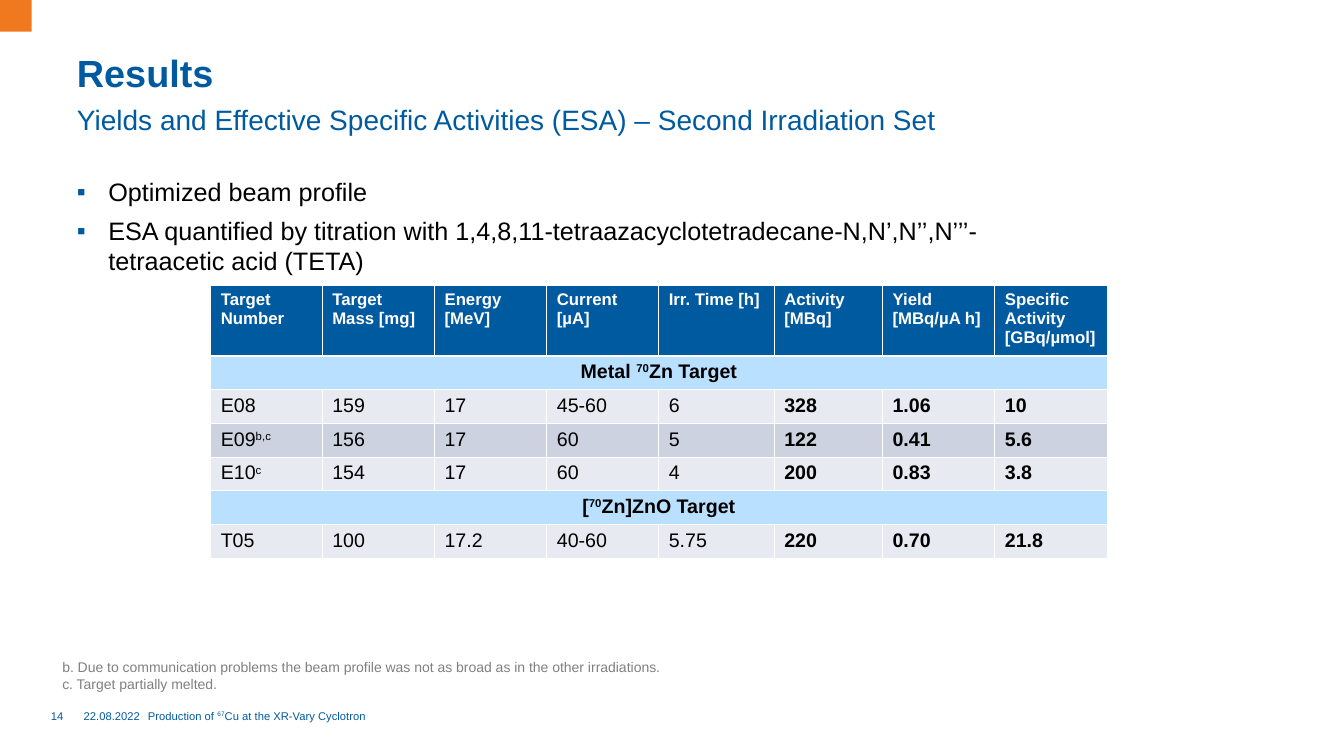
from dataclasses import dataclass

from lxml import etree
from pptx import Presentation
from pptx.enum import shapes, text
from pptx.dml.color import RGBColor
from pptx.oxml import ns
from pptx.util import Cm, Pt

COLORS = {
    "orange": "F0781E",
    "blue": "005AA0",
    "sky": "B9E0FF",
    "light": "E7EAF0",
    "dark": "CCD2DF",
    "white": "FFFFFF",
    "black": "000000",
    "gray": "808080",
}
LEFT, RIGHT, CENTER = text.PP_ALIGN.LEFT, text.PP_ALIGN.RIGHT, text.PP_ALIGN.CENTER
TOP, MIDDLE = text.MSO_ANCHOR.TOP, text.MSO_ANCHOR.MIDDLE


@dataclass
class Style:
    size: float
    color: str
    bold: bool = False
    align: text.PP_ALIGN = LEFT
    space_after: float = 0
    line_spacing: float = 1.0
    bullet: str = ""


@dataclass
class Label:
    left: float
    top: float
    width: float
    height: float
    lines: list[str]
    style: Style
    anchor: text.MSO_ANCHOR = TOP
    inset: tuple[float, float] = (0, 0)


@dataclass
class Row:
    cells: list[str]
    fill: str
    height: float = 0.85


def color(name: str) -> RGBColor:
    return RGBColor.from_string(COLORS[name])


def add_bullet(paragraph, mark: str) -> None:
    properties = paragraph._p.get_or_add_pPr()
    properties.set("marL", str(Cm(0.79)))
    properties.set("indent", str(Cm(-0.79)))
    bullet_color = etree.SubElement(properties, ns.qn("a:buClr"))
    etree.SubElement(bullet_color, ns.qn("a:srgbClr"), val=COLORS["blue"])
    etree.SubElement(properties, ns.qn("a:buFont"), typeface="Arial")
    etree.SubElement(properties, ns.qn("a:buChar"), char=mark)


def write_line(paragraph, line: str, style: Style) -> None:
    """Write one paragraph; parts between carets are superscript."""
    paragraph.alignment = style.align
    paragraph.line_spacing = style.line_spacing
    paragraph.space_after = Pt(style.space_after)
    if style.bullet:
        add_bullet(paragraph, style.bullet)
    paragraph.font.name = "Arial"
    paragraph.font.size = Pt(style.size)
    paragraph.font.bold = style.bold
    paragraph.font.color.rgb = color(style.color)
    for index, part in enumerate(line.split("^")):
        if part:
            span = paragraph.add_run()
            span.text = part
            if index % 2:
                span._r.get_or_add_rPr().set("baseline", "30000")


def add_label(page, label: Label) -> None:
    box = page.shapes.add_textbox(
        Cm(label.left), Cm(label.top), Cm(label.width), Cm(label.height))
    frame = box.text_frame
    frame.word_wrap = True
    frame.vertical_anchor = label.anchor
    frame.margin_left = frame.margin_right = Cm(label.inset[0])
    frame.margin_top = frame.margin_bottom = Cm(label.inset[1])
    for index, line in enumerate(label.lines):
        paragraph = frame.add_paragraph() if index else frame.paragraphs[0]
        write_line(paragraph, line, label.style)


def add_results(page, rows: list[Row], widths: list[float]) -> None:
    table = page.shapes.add_table(
        len(rows), len(widths), Cm(5.31), Cm(7.19),
        Cm(sum(widths)), Cm(sum(row.height for row in rows))).table
    table.horz_banding = False
    for column, width in zip(table.columns, widths):
        column.width = Cm(width)
    for row_index, row in enumerate(rows):
        table.rows[row_index].height = Cm(row.height)
        is_group = len(row.cells) == 1
        if is_group:
            table.cell(row_index, 0).merge(table.cell(row_index, len(widths) - 1))
        for column_index, value in enumerate(row.cells):
            cell = table.cell(row_index, column_index)
            cell.fill.solid()
            cell.fill.fore_color.rgb = color(row.fill)
            if row_index == 0:
                style = Style(12, "white", bold=True)
            elif is_group:
                style = Style(14, "black", bold=True, align=CENTER)
            else:
                style = Style(14, "black", bold=column_index >= FIRST_RESULT)
            write_line(cell.text_frame.paragraphs[0], value, style)


# Content
FOOTER = Style(8, "blue")
FOOTER_RIGHT = Style(8, "blue", align=RIGHT)
LABELS = [
    Label(1.94, 1.37, 19.5, 1.14, ["Results"],
          Style(27, "blue", bold=True, line_spacing=0.9)),
    Label(1.94, 2.59, 23.52, 0.91,
          ["Yields and Effective Specific Activities (ESA) – Second Irradiation Set"],
          Style(20, "blue", space_after=6)),
    Label(1.94, 4.45, 24.46, 3.15,
          ["Optimized beam profile",
           "ESA quantified by titration with "
           "1,4,8,11-tetraazacyclotetradecane-N,N’,N’’,N’’’-tetraacetic acid (TETA)"],
          Style(18, "black", space_after=6, bullet="▪")),
    Label(1.32, 16.46, 31.72, 1.12,
          ["b. Due to communication problems the beam profile was not as broad "
           "as in the other irradiations.",
           "c. Target partially melted."],
          Style(10, "gray"), inset=(0.25, 0.13)),
    Label(0.13, 17.53, 1.47, 1.02, ["14"], FOOTER_RIGHT, MIDDLE),
    Label(1.83, 17.53, 1.7, 1.02, ["22.08.2022"], FOOTER_RIGHT, MIDDLE),
    Label(3.73, 17.53, 12.57, 1.02,
          ["Production of ^67^Cu at the XR-Vary Cyclotron"], FOOTER, MIDDLE),
]
FIRST_RESULT = 5
WIDTHS = [2.81, 2.83, 2.83, 2.82, 2.91, 2.73, 2.83, 2.83]
ROWS = [
    Row(["Target Number", "Target Mass [mg]", "Energy [MeV]", "Current [µA]",
         "Irr. Time [h]", "Activity [MBq]", "Yield [MBq/µA h]",
         "Specific Activity [GBq/µmol]"], "blue", 1.68),
    Row(["Metal ^70^Zn Target"], "sky"),
    Row(["E08", "159", "17", "45-60", "6", "328", "1.06", "10"], "light"),
    Row(["E09^b,c^", "156", "17", "60", "5", "122", "0.41", "5.6"], "dark"),
    Row(["E10^c^", "154", "17", "60", "4", "200", "0.83", "3.8"], "light"),
    Row(["[^70^Zn]ZnO Target"], "sky"),
    Row(["T05", "100", "17.2", "40-60", "5.75", "220", "0.70", "21.8"], "light"),
]


def main() -> None:
    deck = Presentation()
    deck.slide_width, deck.slide_height = Cm(33.87), Cm(19.05)
    page = deck.slides.add_slide(deck.slide_layouts[6])

    # Corner mark
    corner = page.shapes.add_shape(
        shapes.MSO_SHAPE.RECTANGLE, 0, 0, Cm(0.8), Cm(0.8))
    corner.shadow.inherit = False
    corner.fill.solid()
    corner.fill.fore_color.rgb = color("orange")
    corner.line.fill.background()

    # Headings, bullets, footnotes and footer
    for label in LABELS:
        add_label(page, label)

    # Results table
    add_results(page, ROWS, WIDTHS)
    deck.save("out.pptx")


if __name__ == "__main__":
    main()
